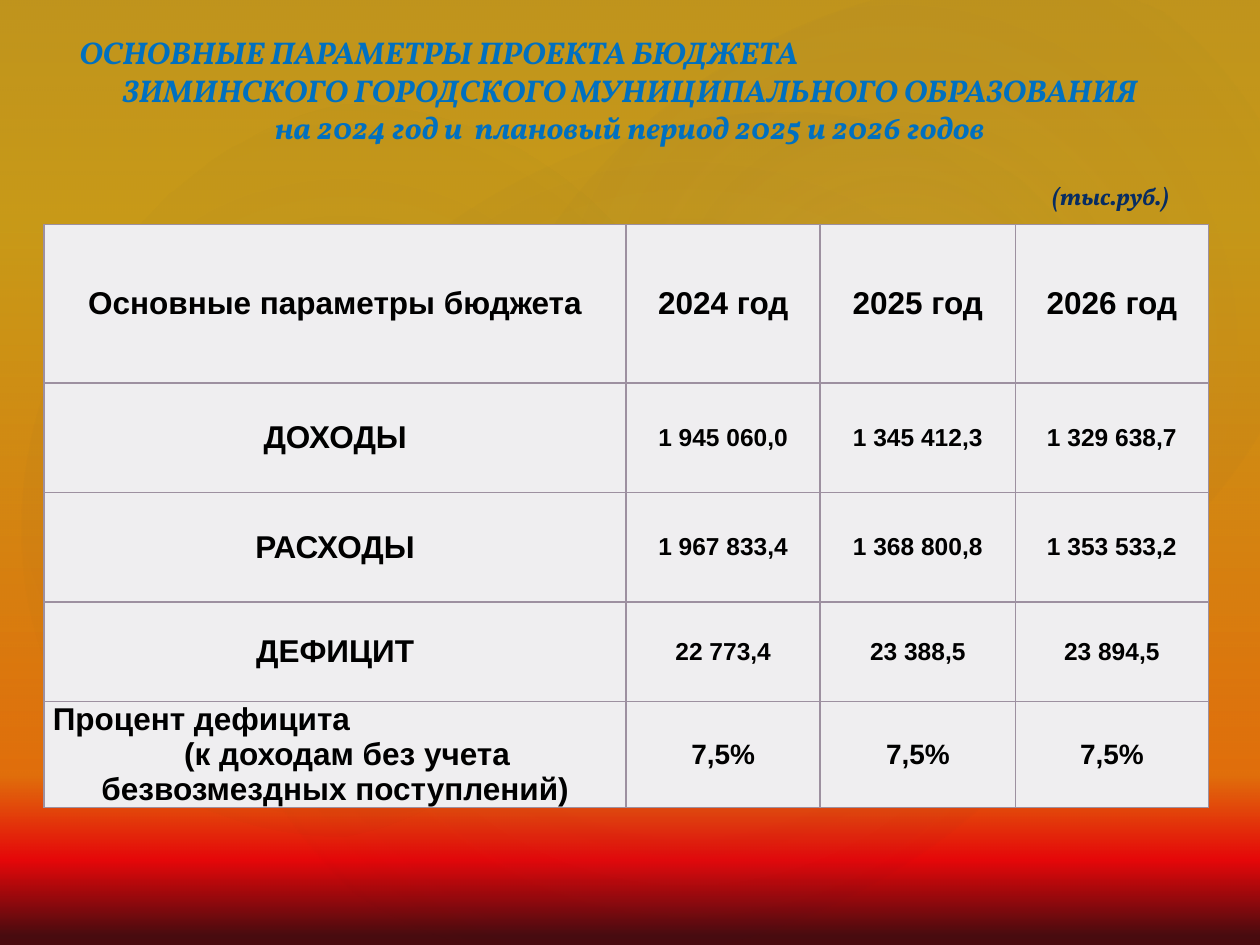
"""Build the slide with the main parameters of the town budget."""
from dataclasses import dataclass

from lxml import etree
from pptx import Presentation
from pptx.dml.color import RGBColor
from pptx.enum import shapes, text
from pptx.oxml import parse_xml
from pptx.oxml.ns import nsdecls, qn
from pptx.util import Inches, Pt

CENTER, LEFT = text.PP_ALIGN.CENTER, text.PP_ALIGN.LEFT


@dataclass(frozen=True)
class Theme:
    """Colours, fonts and type sizes."""
    title: str = "0070C0"
    unit: str = "072C62"
    ink: str = "000000"
    cell: str = "EFEEF0"
    border: str = "9D90A0"
    shade: str = "242852"
    veil: str = "504652"
    glow: str = "C4BCC6"
    sky: tuple = ((23, "FFC000", 0), (82, "FF7A00", 100), (91, "FF0300", 100), (99, "4D0808", 100))
    display: str = "Vollkorn"
    body: str = "Arial"
    large: int = 18
    medium: int = 16
    small: int = 14


class Deck:
    """Hold the theme and the current slide."""

    def __init__(self, theme):
        """Open a 10 by 7.5 inch presentation with a title-only slide."""
        self.theme = theme
        self.prs = Presentation()
        self.prs.slide_width, self.prs.slide_height = Inches(10), Inches(7.5)
        self.s = self.prs.slides.add_slide(self.prs.slide_layouts[5])

    def gradient(self, fill, owner, stops, radial=False):
        """Give a fill the listed (position, colour, opacity) stops."""
        fill.gradient()
        grad = owner.xpath(".//a:gradFill")[0]
        for child in list(grad):
            grad.remove(child)
        items = "".join(
            f'<a:gs pos="{pos * 1000}"><a:srgbClr val="{color}">'
            f'<a:alpha val="{alpha * 1000}"/></a:srgbClr></a:gs>'
            for pos, color, alpha in stops)
        grad.append(parse_xml(f'<a:gsLst {nsdecls("a")}>{items}</a:gsLst>'))
        if radial:
            shade = etree.SubElement(grad, qn("a:path"), {"path": "circle"})
            etree.SubElement(shade, qn("a:fillToRect"), dict.fromkeys("ltrb", "50000"))
        else:
            etree.SubElement(grad, qn("a:lin"), ang="5400000", scaled="0")

    def background(self, colors):
        """Fill the background from top to bottom."""
        stops = [(pos, color, 100) for pos, color, _ in colors]
        self.gradient(self.s.background.fill, self.s.element, stops)

    def shape(self, kind, box, stops, rotation=0, radial=False):
        """Add a translucent gradient shape."""
        sp = self.s.shapes.add_shape(kind, *map(Inches, box))
        sp.rotation = rotation
        sp.shadow.inherit = False
        sp.line.fill.background()
        self.gradient(sp.fill, sp.element, stops, radial)

    def paragraph(self, p, words, size, color, font, align=CENTER, italic=False, margin=0, indent=0):
        """Write and format one paragraph."""
        p.text, p.alignment = words, align
        p.font.name, p.font.size = font, Pt(size)
        p.font.bold, p.font.italic = True, italic
        p.font.color.rgb = RGBColor.from_string(color)
        pPr = p._p.get_or_add_pPr()
        pPr.set("marL", str(Inches(margin)))
        pPr.set("indent", str(Inches(indent)))

    def title(self, box, lines):
        """Place the title above the decoration; lines are (words, alignment, margin)."""
        sp = self.s.shapes.title
        sp.element.getparent().append(sp.element)
        sp.left, sp.top, sp.width, sp.height = map(Inches, box)
        tf = sp.text_frame
        tf.word_wrap, tf.auto_size = True, text.MSO_AUTO_SIZE.NONE
        tf.vertical_anchor = text.MSO_ANCHOR.TOP
        t = self.theme
        for i, (words, align, margin) in enumerate(lines):
            p = tf.add_paragraph() if i else tf.paragraphs[0]
            self.paragraph(p, words, t.large, t.title, t.display, align, True, margin)

    def label(self, box, words):
        """Add a small italic label."""
        tf = self.s.shapes.add_textbox(*map(Inches, box)).text_frame
        tf.word_wrap = True
        t = self.theme
        self.paragraph(tf.paragraphs[0], words, t.small, t.unit, t.display, LEFT, True)

    def cell(self, cell, lines, size):
        """Style a cell; lines are (words, alignment, first-line indent)."""
        t = self.theme
        cell.margin_left = cell.margin_right = Inches(0.07)
        cell.margin_top = cell.margin_bottom = 0
        cell.vertical_anchor = text.MSO_ANCHOR.MIDDLE
        for i, (words, align, indent) in enumerate(lines):
            p = cell.text_frame.add_paragraph() if i else cell.text_frame.paragraphs[0]
            self.paragraph(p, words, size, t.ink, t.body, align, indent=indent)
        tcPr = cell._tc.get_or_add_tcPr()
        for side in ("lnL", "lnR", "lnT", "lnB"):
            ln = etree.SubElement(tcPr, qn(f"a:{side}"), w=str(Pt(1)))
            fill = etree.SubElement(ln, qn("a:solidFill"))
            etree.SubElement(fill, qn("a:srgbClr"), val=t.border)
        cell.fill.solid()
        cell.fill.fore_color.rgb = RGBColor.from_string(t.cell)

    def table(self, left, top, widths, heights, rows):
        """Add a table; each row is (label lines, values, value size)."""
        frame = self.s.shapes.add_table(
            len(heights), len(widths), Inches(left), Inches(top),
            Inches(sum(widths)), Inches(sum(heights)))
        grid = frame.table
        for column, width in zip(grid.columns, widths):
            column.width = Inches(width)
        for row, height, (head, values, size) in zip(grid.rows, heights, rows):
            row.height = Inches(height)
            first, *others = row.cells
            self.cell(first, head, self.theme.large)
            for cell, value in zip(others, values):
                self.cell(cell, [(value, CENTER, 0)], size)


def main():
    """Build and save the slide."""
    t = Theme()
    deck = Deck(t)
    deck.background(t.sky)
    kinds = shapes.MSO_SHAPE
    deck.shape(kinds.RECTANGLE, (0, 0, 10, 7.5), [(0, t.veil, 36), (100, t.shade, 10)])
    for box, rotation, alpha in (
            ((1.5, 1.14, 7.92, 6.24), 328.7, 7),
            ((-0.3, 1.28, 6.06, 4.9), 294.3, 8),
            ((3.58, 0.13, 7.09, 5.2), 328.7, 8)):
        deck.shape(kinds.OVAL, box, [(0, t.glow, alpha), (58, t.shade, 0)], rotation, True)

    deficit_share = [("Процент дефицита", LEFT, 0),
                     ("(к доходам без учета безвозмездных поступлений)", CENTER, 0.19)]
    rows = [
        ([("Основные параметры бюджета", CENTER, 0)],
         ("2024 год", "2025 год", "2026 год"), t.large),
        ([("ДОХОДЫ", CENTER, 0)], ("1 945 060,0", "1 345 412,3", "1 329 638,7"), t.small),
        ([("РАСХОДЫ", CENTER, 0)], ("1 967 833,4", "1 368 800,8", "1 353 533,2"), t.small),
        ([("ДЕФИЦИТ", CENTER, 0)], ("22 773,4", "23 388,5", "23 894,5"), t.small),
        (deficit_share, ("7,5%",) * 3, t.medium),
    ]
    deck.table(0.35, 1.78, (4.62, 1.54, 1.55, 1.53), (1.26, 0.87, 0.87, 0.79, 0.84), rows)
    deck.title((0, 0.21, 10, 1.01), [
        ("ОСНОВНЫЕ ПАРАМЕТРЫ ПРОЕКТА БЮДЖЕТА", LEFT, 0.53),
        ("ЗИМИНСКОГО ГОРОДСКОГО МУНИЦИПАЛЬНОГО ОБРАЗОВАНИЯ", CENTER, 0),
        ("на 2024 год и  плановый период 2025 и 2026 годов", CENTER, 0)])
    deck.label((8.25, 1.39, 1.57, 0.34), "(тыс.руб.)")
    deck.prs.save("out.pptx")


if __name__ == "__main__":
    main()
